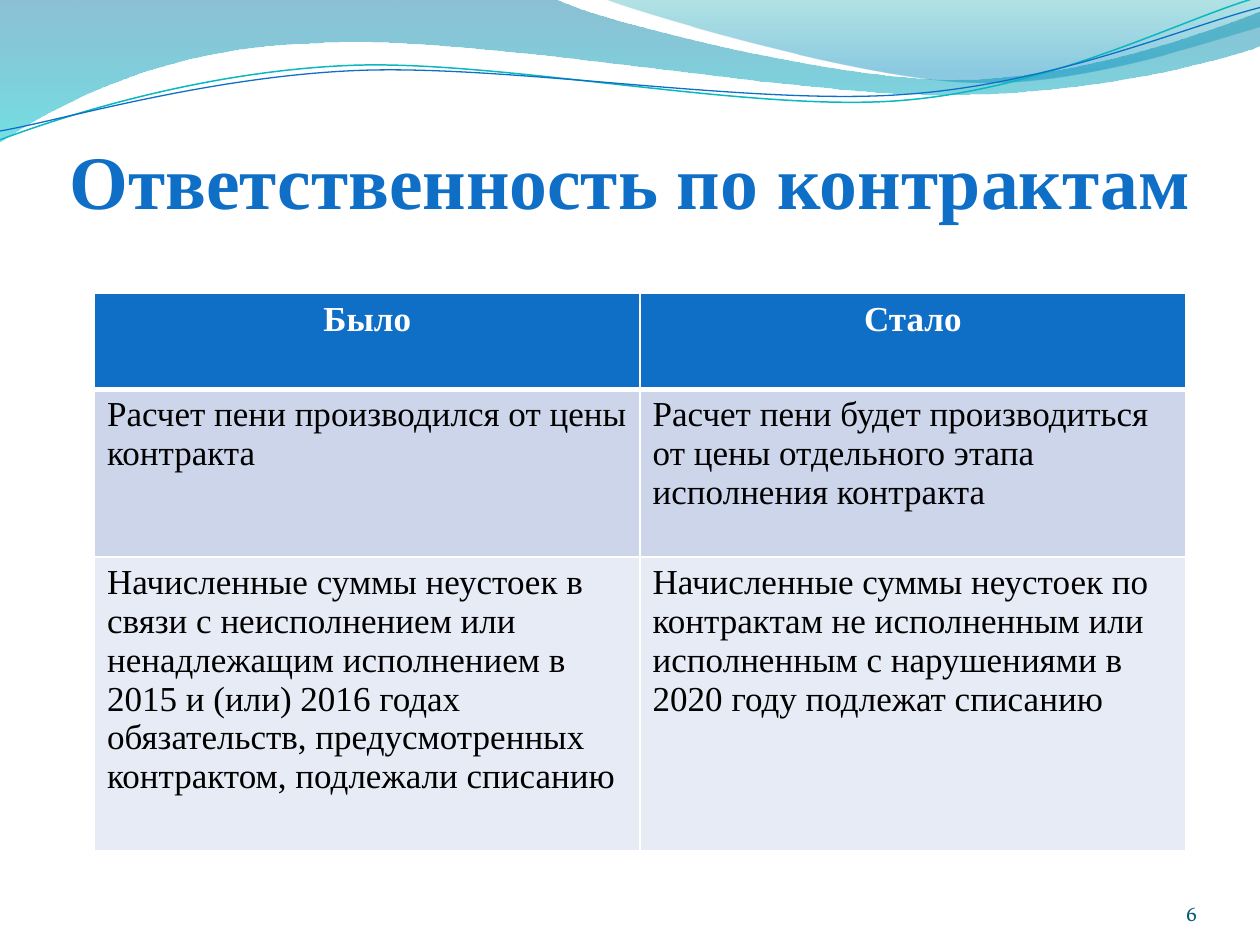
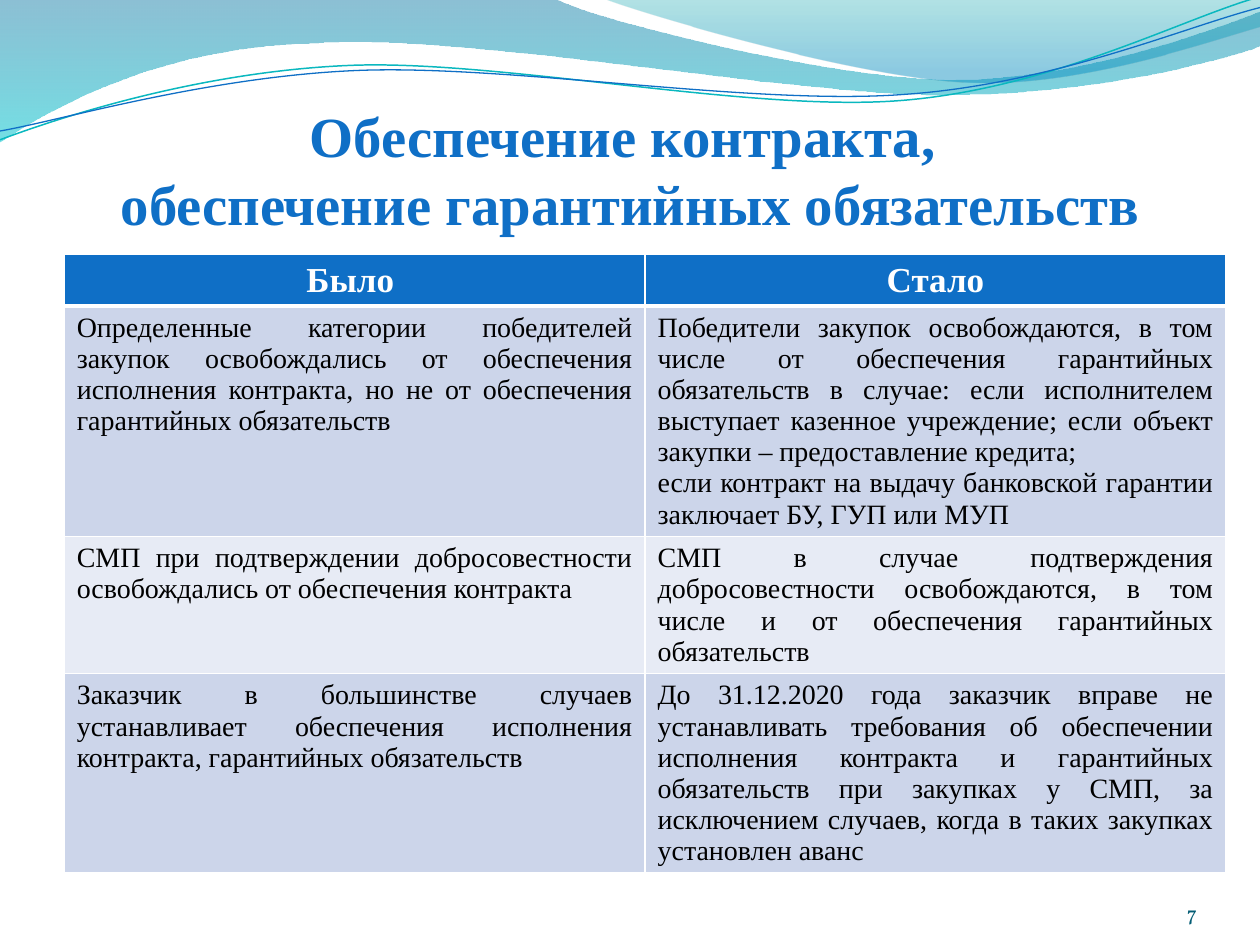
import pptx
import pptx.util
import pptx.dml.color
import pptx.enum.text
import pptx.oxml
import pptx.oxml.ns

UNIT = pptx.util.Inches(1)
COLS, ROWS = 10, 7.5
SERIF, SMALL = "Times New Roman", "Vollkorn"
BLUE, TEAL, DEEP, WHITE, BLACK = "0F6FC6", "0AB8BF", "045D75", "FFFFFF", "000000"
BANDS = "CCD5EA", "E7EBF5"
ALIGN = pptx.enum.text.PP_ALIGN
ANCHOR = pptx.enum.text.MSO_ANCHOR

FULL = (0, 0, COLS, ROWS)
PAGE = (8.67, 6.95, 0.83, 0.4)

WAVES = [
    dict(stops=[(0, "0074A1", 45), (1, "00C6CF", 55)], parts=[
        [(0, 0)], [(4.4, -0.01)],
        [(4.76, 0.17), (6.64, 0.63), (7.58, 0.63)],
        [(8.53, 0.63), (9.58, 0.26), (10, 0.09)], [(10.01, 0.36)],
        [(9.83, 0.44), (8.7, 0.76), (7.46, 0.75)],
        [(6.22, 0.75), (3.82, 0.28), (2.57, 0.34)],
        [(1.29, 0.36), (0.46, 0.83), (-0.01, 1.13)], [(0, 0)]]),
    dict(stops=[(0, "00A1A9", 30), (0.8, "008BBF", 45)], parts=[
        [(4.79, -0.01)],
        [(5.09, 0.11), (6.82, 0.62), (7.69, 0.65)],
        [(8.56, 0.69), (9.61, 0.32), (10, 0.21)], [(10, 0)],
        [(4.79, -0.01)]]),
    dict(line=(TEAL, 0.85), parts=[
        [(0, 1.11)],
        [(0.48, 0.93), (1.58, 0.57), (2.77, 0.52)],
        [(3.95, 0.47), (5.93, 0.89), (7.13, 0.8)],
        [(8.33, 0.71), (9.38, 0.15), (9.98, -0.02)]]),
    dict(line=(BLUE, 0.75), parts=[
        [(0, 1.04)],
        [(0.47, 0.96), (1.64, 0.61), (2.83, 0.56)],
        [(4.03, 0.51), (5.97, 0.84), (7.17, 0.75)],
        [(8.36, 0.67), (9.41, 0.21), (10, 0.06)]]),
]

SLIDES = [
    dict(page="6", size=43.2, head=(0.5, 0.77, 9, 1.25),
         title=["Ответственность по контрактам"],
         box=(0.75, 2.33, 8.66, 4.42), rows=[0.76, 1.33, 2.33],
         body=20, align=ALIGN.LEFT,
         cells=[
             ["Было", "Стало"],
             ["Расчет пени производился от цены контракта",
              "Расчет пени будет производиться от цены отдельного этапа "
              "исполнения контракта"],
             ["Начисленные суммы неустоек в связи с неисполнением или "
              "ненадлежащим исполнением в 2015 и (или) 2016 годах "
              "обязательств, предусмотренных контрактом, подлежали списанию",
              "Начисленные суммы неустоек по контрактам не исполненным или "
              "исполненным с нарушениями в 2020 году подлежат списанию"]]),
    dict(page="7", size=32.4, head=(0.5, 0.77, 9, 1.09),
         title=["Обеспечение контракта, ",
                "обеспечение гарантийных обязательств"],
         box=(0.51, 2.02, 9.22, 1.64), rows=[0.41] * 4,
         body=16, align=ALIGN.JUSTIFY,
         cells=[
             ["Было ", "Стало"],
             ["Определенные категории победителей закупок освобождались от "
              "обеспечения исполнения контракта, но не от обеспечения "
              "гарантийных обязательств",
              "Победители закупок освобождаются, в том числе от обеспечения "
              "гарантийных обязательств в случае: если исполнителем выступает "
              "казенное учреждение; если объект закупки – предоставление "
              "кредита;\n"
              "если контракт на выдачу банковской гарантии заключает БУ, ГУП "
              "или МУП"],
             ["СМП при подтверждении добросовестности освобождались от "
              "обеспечения контракта",
              "СМП в случае подтверждения добросовестности освобождаются, в "
              "том числе и от обеспечения гарантийных обязательств"],
             ["Заказчик в большинстве случаев устанавливает обеспечения "
              "исполнения контракта, гарантийных обязательств",
              "До 31.12.2020 года заказчик вправе не устанавливать требования "
              "об обеспечении исполнения контракта и гарантийных обязательств "
              "при закупках у СМП, за исключением случаев, когда в таких "
              "закупках установлен аванс"]]),
]


def rgb(tone):
    """Turn a hex string into a colour."""
    return pptx.dml.color.RGBColor.from_string(tone)


def emu(box):
    """Turn grid lengths into whole EMU."""
    return [round(n * UNIT) for n in box]


def write(para, text, size, tone, font=SERIF, bold=False):
    """Add one formatted run."""
    run = para.add_run()
    run.text = text
    run.font.name, run.font.size = font, pptx.util.Pt(size)
    run.font.bold, run.font.color.rgb = bold, rgb(tone)


def frame(shape, anchor, top=0):
    """Set wrapping, anchor and insets of a text frame."""
    text = shape.text_frame
    text.word_wrap, text.auto_size = True, pptx.enum.text.MSO_AUTO_SIZE.NONE
    text.vertical_anchor = anchor
    text.margin_left = text.margin_right = text.margin_bottom = 0
    text.margin_top = round(top * UNIT)
    return text.paragraphs[0]


def bend(shape, parts):
    """Join the straight steps of each three-point part into one curve."""
    steps = iter(list(shape._element.iter(pptx.oxml.ns.qn("a:lnTo"))))
    for part in parts[1:]:
        group = [next(steps) for _ in part]
        if len(group) == 3:
            curve = pptx.oxml.parse_xml(
                f'<a:cubicBezTo {pptx.oxml.ns.nsdecls("a")}/>')
            group[0].addprevious(curve)
            for step in group:
                curve.append(step[0])
                step.getparent().remove(step)


def shade(shape, stops):
    """Fill a shape with a see-through gradient from top to bottom."""
    shape.fill.gradient()
    shape.fill.gradient_angle = 270
    for stop, (place, tone, _) in zip(shape.fill.gradient_stops, stops):
        stop.position, stop.color.rgb = place, rgb(tone)
    tones = list(shape._element.iter(pptx.oxml.ns.qn("a:srgbClr")))
    for node, (_, _, alpha) in zip(tones, stops):
        node.append(pptx.oxml.parse_xml(
            f'<a:alpha {pptx.oxml.ns.nsdecls("a")} val="{alpha * 1000}"/>'))


def wave(slide, box, parts, stops=None, line=None):
    """Draw one filled wave or one wave line in the box."""
    dots = [emu((box[0] + x, box[1] + y)) for part in parts for x, y in part]
    pen = slide.shapes.build_freeform(*dots[0])
    pen.add_line_segments(dots[1:], close=bool(stops))
    shape = pen.convert_to_shape()
    bend(shape, parts)
    shape.shadow.inherit = False
    if stops:
        shade(shape, stops)
        shape.line.fill.background()
    else:
        shape.fill.background()
        shape.line.color.rgb = rgb(line[0])
        shape.line.width = pptx.util.Pt(line[1])
    return shape


def header(slide, layout, box):
    """Draw the waves and move them to the shared layout."""
    for item in WAVES:
        shape = wave(slide, box, **item)
        layout.shapes._spTree.append(shape._element)


def heading(slide, box, lines, size):
    """Place and fill the title."""
    title = slide.shapes.title
    title.left, title.top, title.width, title.height = emu(box)
    para = frame(title, ANCHOR.MIDDLE, 0.05)
    para.alignment = ALIGN.CENTER
    for i, line in enumerate(lines):
        if i:
            para.add_line_break()
        write(para, line, size, BLUE, bold=True)


def footer(slide, box, page):
    """Place the page number."""
    para = frame(slide.shapes.add_textbox(*emu(box)), ANCHOR.BOTTOM)
    para.alignment = ALIGN.RIGHT
    write(para, page, 12, DEEP, SMALL)


def edge(cell, row):
    """Give a cell white borders, thick below the header."""
    wide = {"T": 3 if row == 1 else 1, "B": 3 if row == 0 else 1}
    props = cell._tc.get_or_add_tcPr()
    for side in "LRTB":
        props.append(pptx.oxml.parse_xml(
            f'<a:ln{side} {pptx.oxml.ns.nsdecls("a")} '
            f'w="{pptx.util.Pt(wide.get(side, 1))}"><a:solidFill>'
            f'<a:srgbClr val="{WHITE}"/></a:solidFill></a:ln{side}>'))


def grid(slide, box, rows, cells, body, align):
    """Place the table that compares before and after."""
    table = slide.shapes.add_table(len(rows), len(cells[0]), *emu(box)).table
    table.horz_banding = False
    for r, (high, texts) in enumerate(zip(rows, cells)):
        table.rows[r].height = round(high * UNIT)
        top = r == 0
        for c, text in enumerate(texts):
            cell = table.cell(r, c)
            edge(cell, r)
            cell.fill.solid()
            cell.fill.fore_color.rgb = rgb(BLUE if top else BANDS[(r - 1) % 2])
            for i, line in enumerate(text.split("\n")):
                area = cell.text_frame
                para = area.add_paragraph() if i else area.paragraphs[0]
                para.alignment = ALIGN.CENTER if top else align
                write(para, line, 20 if top else body,
                      WHITE if top else BLACK, bold=top)


def main():
    """Build and save the deck."""
    deck = pptx.Presentation()
    deck.slide_width, deck.slide_height = emu((COLS, ROWS))
    layout = deck.slide_layouts[5]
    for i, data in enumerate(SLIDES):
        slide = deck.slides.add_slide(layout)
        if i == 0:
            header(slide, layout, FULL)
        heading(slide, data["head"], data["title"], data["size"])
        footer(slide, PAGE, data["page"])
        grid(slide, data["box"], data["rows"], data["cells"],
             data["body"], data["align"])
    deck.save("out.pptx")


if __name__ == "__main__":
    main()
